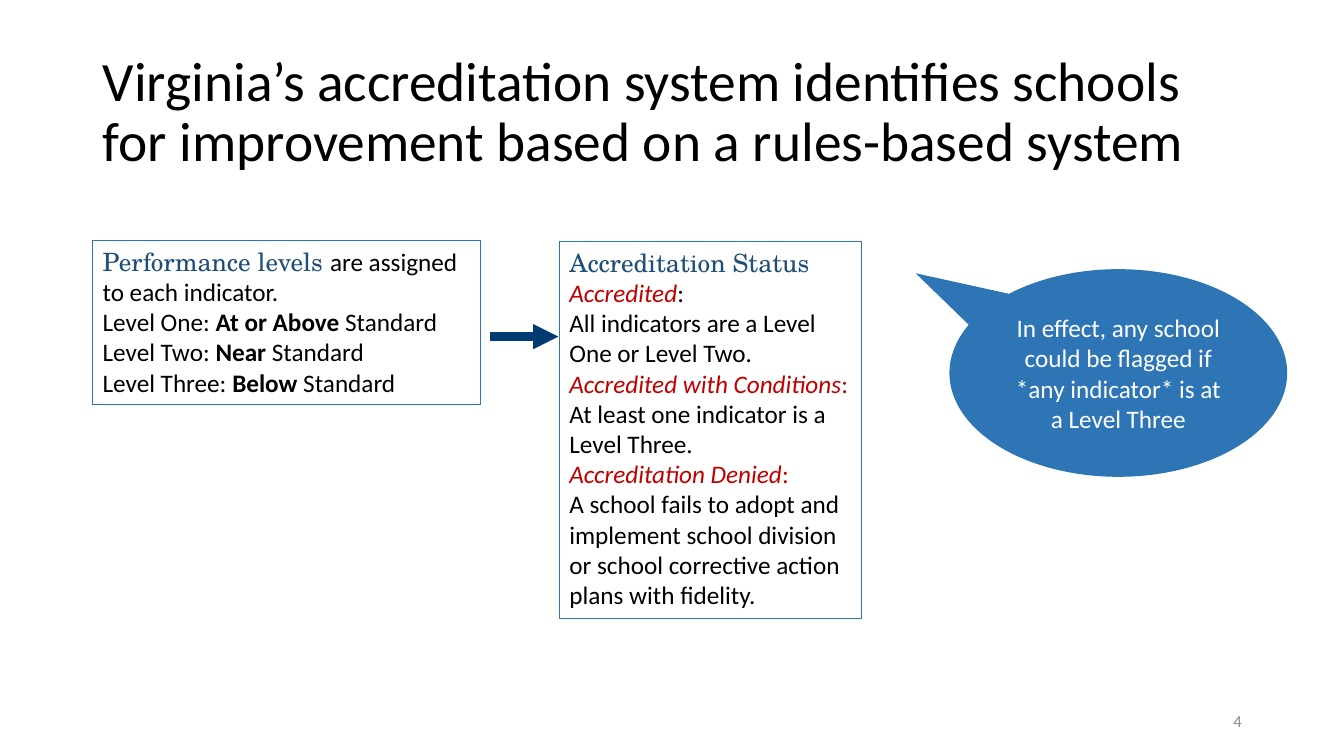
from dataclasses import dataclass, field

from lxml import etree
from pptx import Presentation
from pptx import util as u
from pptx.dml.color import RGBColor
from pptx.enum import shapes, text
from pptx.oxml.ns import qn

SLIDE_WIDTH, SLIDE_HEIGHT = u.Inches(13.333), u.Inches(7.5)


@dataclass(frozen=True)
class Theme:
    body_face: str = "Calibri"
    term_face: str = "TeX Gyre Schola"
    title_size: float = 39.6
    body_size: float = 18
    number_size: float = 12
    ink: str = "000000"
    term: str = "1F4E79"
    status: str = "C00000"
    accent: str = "2E75B6"
    arrow: str = "003C71"
    muted: str = "8C8C8C"
    paper: str = "FFFFFF"


THEME = Theme()


@dataclass(frozen=True)
class Area:
    """A rectangle in percent of the slide's width and height."""
    left: float
    top: float
    width: float
    height: float

    def place(self) -> tuple[int, int, int, int]:
        return (across(self.left), down(self.top),
                across(self.width), down(self.height))


@dataclass(frozen=True)
class Style:
    color: str = THEME.ink
    size: float = THEME.body_size
    face: str = THEME.body_face
    bold: bool = False
    italic: bool = False


PLAIN = Style()
STRONG = Style(bold=True)
TERM = Style(THEME.term, face=THEME.term_face)
STATUS = Style(THEME.status, italic=True)
STATUS_MARK = Style(THEME.status)

Line = list[tuple[str, Style]]


@dataclass(frozen=True)
class Panel:
    area: Area
    lines: list[Line]
    shape: int = shapes.MSO_SHAPE.RECTANGLE
    fill: str | None = None
    outline: str | None = THEME.accent
    adjustments: tuple[float, ...] = ()
    frame: dict = field(default_factory=lambda: {
        "vertical_anchor": text.MSO_ANCHOR.TOP,
        "auto_size": text.MSO_AUTO_SIZE.SHAPE_TO_FIT_TEXT})
    align: int = text.PP_ALIGN.LEFT


def across(percent: float) -> int:
    return round(SLIDE_WIDTH * percent / 100)


def down(percent: float) -> int:
    return round(SLIDE_HEIGHT * percent / 100)


def apply(target, formats: dict) -> None:
    for name, value in formats.items():
        setattr(target, name, value)


def write(frame, lines: list[Line], frame_formats: dict,
          paragraph_formats: dict) -> None:
    apply(frame, {"word_wrap": True, **frame_formats})
    for index, line in enumerate(lines):
        paragraph = frame.add_paragraph() if index else frame.paragraphs[0]
        apply(paragraph, paragraph_formats)
        for words, style in line:
            run = paragraph.add_run()
            run.text = words
            apply(run.font, {"name": style.face, "size": u.Pt(style.size),
                             "bold": style.bold, "italic": style.italic})
            run.font.color.rgb = RGBColor.from_string(style.color)


def draw_panel(slide, panel: Panel) -> None:
    shape = slide.shapes.add_shape(panel.shape, *panel.area.place())
    shape.shadow.inherit = False
    for index, value in enumerate(panel.adjustments):
        shape.adjustments[index] = value
    if panel.fill:
        shape.fill.solid()
        shape.fill.fore_color.rgb = RGBColor.from_string(panel.fill)
    else:
        shape.fill.background()
    if panel.outline:
        shape.line.color.rgb = RGBColor.from_string(panel.outline)
        shape.line.width = u.Pt(0.75)
    else:
        shape.line.fill.background()
    write(shape.text_frame, panel.lines, panel.frame, {"alignment": panel.align})


def draw_arrow(slide, start: float, end: float, level: float) -> None:
    arrow = slide.shapes.add_connector(
        shapes.MSO_CONNECTOR.STRAIGHT,
        across(start), down(level), across(end), down(level))
    arrow.line.color.rgb = RGBColor.from_string(THEME.arrow)
    arrow.line.width = u.Pt(6)
    etree.SubElement(arrow.line._get_or_add_ln(), qn("a:tailEnd"), type="triangle")
    etree.SubElement(arrow._element.spPr, qn("a:effectLst"))


def draw_title(slide, words: str, area: Area) -> None:
    title = slide.shapes.title
    apply(title, dict(zip(("left", "top", "width", "height"), area.place())))
    write(title.text_frame, [[(words, Style(size=THEME.title_size))]],
          {"vertical_anchor": text.MSO_ANCHOR.MIDDLE,
           "auto_size": text.MSO_AUTO_SIZE.NONE},
          {"alignment": text.PP_ALIGN.LEFT, "line_spacing": 0.9})


def draw_page_number(slide, number: str, area: Area) -> None:
    box = slide.shapes.add_textbox(*area.place())
    write(box.text_frame, [[(number, Style(THEME.muted, THEME.number_size))]],
          {"vertical_anchor": text.MSO_ANCHOR.MIDDLE},
          {"alignment": text.PP_ALIGN.RIGHT})


def level_line(level: str, rating: str) -> Line:
    return [(f"Level {level}: ", PLAIN), (rating, STRONG), (" Standard", PLAIN)]


LEVELS = [("One", "At or Above"), ("Two", "Near"), ("Three", "Below")]

PERFORMANCE = Panel(
    Area(6.9, 31.87, 28.88, 21.6),
    [[("Performance levels ", TERM),
      ("are assigned to each indicator.", PLAIN)],
     *(level_line(level, rating) for level, rating in LEVELS)])

ACCREDITATION = Panel(
    Area(41.63, 32, 22.5, 49.87),
    [[("Accreditation Status", TERM)],
     [("Accredited", STATUS), (":", PLAIN)],
     [("All indicators are a Level One or Level Two.", PLAIN)],
     [("Accredited with Conditions", STATUS), (": ", STATUS_MARK),
      ("At least one indicator is a Level Three.", PLAIN)],
     [("Accreditation Denied", STATUS), (":", STATUS_MARK)],
     [("A school fails to adopt and implement school division or school "
       "corrective action plans with fidelity.", PLAIN)]])

EFFECT = Panel(
    Area(70.65, 35.6, 25.13, 27.47),
    [[("In effect, any school could be flagged if *any indicator* is at "
       "a Level Three", Style(THEME.paper))]],
    shape=shapes.MSO_SHAPE.OVAL_CALLOUT, fill=THEME.accent, outline=None,
    adjustments=(-0.6, -0.48),
    frame={"vertical_anchor": text.MSO_ANCHOR.MIDDLE},
    align=text.PP_ALIGN.CENTER)


def main() -> None:
    deck = Presentation()
    apply(deck, {"slide_width": SLIDE_WIDTH, "slide_height": SLIDE_HEIGHT})
    slide = deck.slides.add_slide(deck.slide_layouts.get_by_name("Title Only"))
    draw_title(slide, "Virginia’s accreditation system identifies schools for "
               "improvement based on a rules-based system",
               Area(6.9, 5.33, 86.25, 19.33))
    draw_page_number(slide, "4", Area(70.65, 92.67, 22.5, 5.33))
    for panel in (PERFORMANCE, ACCREDITATION):
        draw_panel(slide, panel)
    draw_arrow(slide, 36.45, 41.55, 44.53)
    draw_panel(slide, EFFECT)
    deck.save("out.pptx")


if __name__ == "__main__":
    main()
